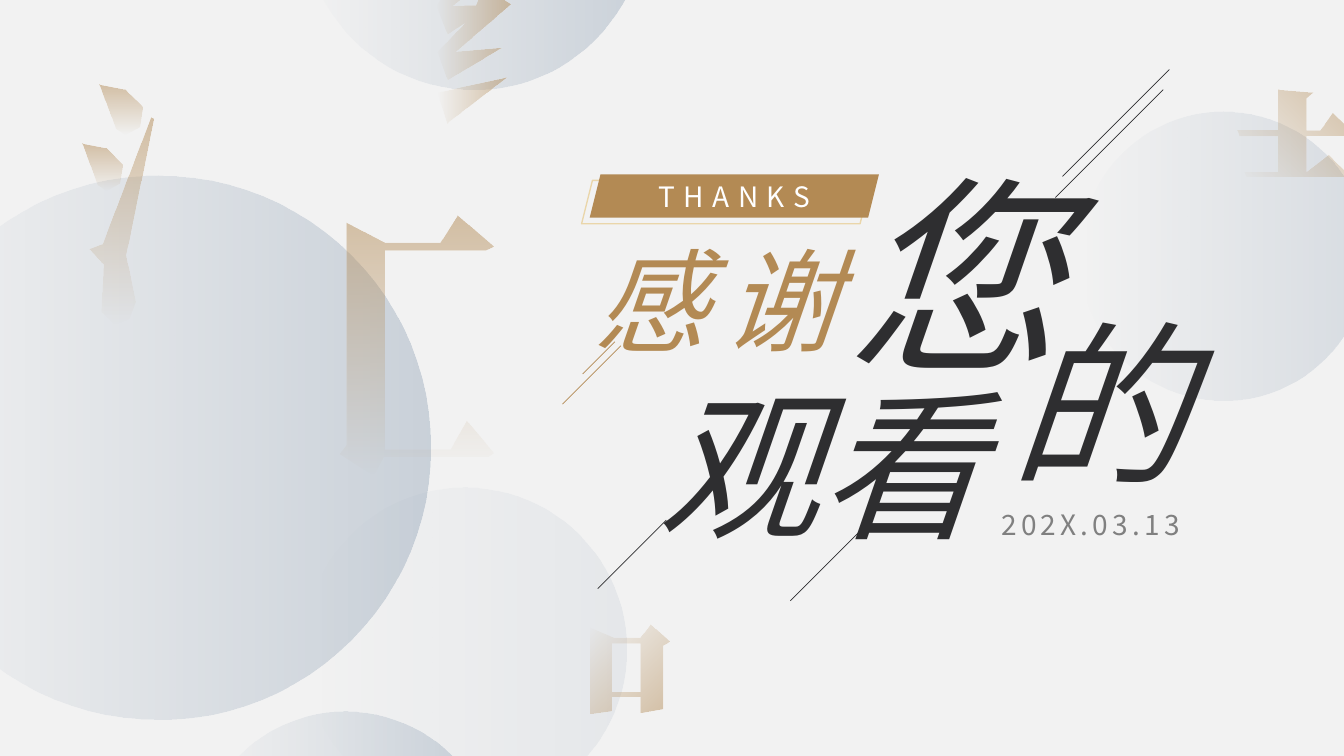
from lxml.etree import SubElement
from pptx import Presentation
from pptx.dml.color import RGBColor
from pptx.enum.shapes import MSO_CONNECTOR, MSO_SHAPE
from pptx.enum.text import MSO_ANCHOR, MSO_AUTO_SIZE, PP_ALIGN
from pptx.oxml.ns import qn
from pptx.util import Emu, Inches, Pt

CELL = Inches(0.1)
COLUMNS, ROWS = 133.33, 75
FONT = "Noto Sans CJK SC"
PAPER, INK, GOLD, PALE_GOLD = "F2F2F2", "2E2E30", "B38A54", "EAD6AA"
SLATE, GREY, WHITE = "6A839F", "808080", "FFFFFF"

CIRCLES = [
    (-11.3, 17.4, 54, 30),
    (30.1, 48.4, 32.1, 10),
    (19.4, 70.6, 29.8, 30),
    (107.1, 11.1, 28.6, 20),
    (30.1, -24.9, 33.8, 30),
]

DROP = [(0, 0), (2.5, 0.5), (4.2, 2.2), (3.9, 4.1), (2.5, 4.9), (1.6, 4.3)]
SWEEP = [(6, 0), (6.3, 0.1), (3.6, 13.6), (4.5, 18.2), (3.9, 19.9), (2.5, 20.5),
         (1.2, 19.2), (1.4, 14.5), (0, 13), (1.3, 12.5)]
FRAME = [(11.7, 0), (15.3, 3.1), (14.4, 3.5), (4.5, 3.5), (4.5, 23.1), (11, 23.1),
         (12.6, 20.3), (15.3, 23.5), (14.7, 23.9), (4.4, 23.9), (3.4, 25.8),
         (0, 23.6), (0.7, 22.7), (0.7, 0.7), (4.5, 2.7), (10, 2.7)]
EARTH = [(4, 0), (7.5, 0.3), (6.8, 0.9), (6.8, 4), (8.2, 4), (9.4, 2.3), (11.7, 4.6),
         (6.8, 4.6), (6.8, 8.1), (9, 6.4), (11.2, 8.6), (0.9, 8.6), (0.7, 8.1),
         (4, 8.1), (4, 4.6), (0.2, 4.6), (0, 4), (4, 4)]
MOUTH = [(5.9, 0), (7.8, 1.7), (7.1, 2.1), (7.1, 8.3), (4.9, 8.7), (4.9, 7.1),
         (2.1, 7.1), (2.1, 8.5), (0, 8.8), (0, 0.3), (2.3, 1.3), (4.9, 1.3)]
MOUTH_HOLE = [(2.1, 1.9), (2.1, 6.6), (4.9, 6.6), (4.9, 1.9)]
THREAD = [(3, 0), (5.9, 1.5), (1.6, 5.2), (3.9, 5.1), (4.6, 3.3), (7.3, 5),
          (1.9, 9.7), (6.4, 9.3), (1.1, 12.5), (0.1, 9.7), (2.9, 6.8),
          (1.1, 8), (0, 5.2)]
TICK = [(6.8, 0), (1.1, 4.4), (1, 4.6), (0, 1.5)]

BRUSH_STROKES = [
    (33.7, 21.4, 1, 90, [FRAME]),
    (9.9, 8.4, 1, 90, [DROP]),
    (8.9, 11.7, 1, 90, [SWEEP]),
    (8.2, 14.2, 0.95, 90, [DROP]),
    (122.8, 8.9, 1, 135, [EARTH]),
    (58.6, 62, 1, 225, [MOUTH, MOUTH_HOLE]),
    (43.3, -4.6, 1, 180, [THREAD]),
    (43.4, 7.7, 1, 180, [TICK]),
]

TITLE_WORDS = [
    ("观看", (59.3, 35.8, 43.8, 20.2), 115, INK, 0),
    ("感谢", (54.7, 22.5, 32.5, 14.3), 80, GOLD, 12),
    ("您", (81.8, 13.9, 25.3, 26), 150, INK, 12),
    ("的", (96.2, 28.8, 25.3, 22), 126, INK, 12),
]

DIAGONALS = [
    (85.2, 52.8, 6.8, INK),
    (61.6, 34.3, 5.8, GOLD),
    (66.1, 51.6, 6.8, INK),
    (115.4, 8.9, 10.7, INK),
    (116, 6.9, 10.6, INK),
    (61, 33.9, 3.2, GOLD),
]


def colour(value):
    return RGBColor.from_string(value)


def cells(*counts):
    return [Emu(round(count * CELL)) for count in counts]


def fade(shape, tint, opacity, direction):
    shape.shadow.inherit = False
    shape.line.fill.background()
    shape.fill.gradient()
    shape.fill.gradient_angle = 360 - direction
    for stop, position, share in zip(shape.fill.gradient_stops, (0, 1), (opacity, 0)):
        stop.position = position
        stop.color.rgb = colour(tint)
        rgb = shape._element.spPr.findall(".//" + qn("a:srgbClr"))[position]
        SubElement(rgb, qn("a:alpha"), val=str(share * 1000))


def add_circle(slide, left, top, size, opacity):
    circle = slide.shapes.add_shape(MSO_SHAPE.OVAL, *cells(left, top, size, size))
    fade(circle, SLATE, opacity, 180)


def add_brush_stroke(slide, left, top, scale, direction, outlines):
    outer, *holes = [[cells(left + x * scale, top + y * scale) for x, y in outline]
                     for outline in outlines]
    builder = slide.shapes.build_freeform(*outer[0])
    builder.add_line_segments(outer[1:], close=True)
    for hole in holes:
        builder.move_to(*hole[0])
        builder.add_line_segments(hole[1:], close=True)
    fade(builder.convert_to_shape(), GOLD, 50, direction)


def add_diagonal(slide, x, y, reach, tint):
    diagonal = slide.shapes.add_connector(
        MSO_CONNECTOR.STRAIGHT, *cells(x, y, x - reach, y + reach))
    diagonal.line.color.rgb = colour(tint)
    diagonal.line.width = Pt(0.5)
    SubElement(diagonal._element.spPr, qn("a:effectLst"))


def write(frame, words, size, tint, spacing, italic=False):
    paragraph = frame.paragraphs[0]
    paragraph.alignment = PP_ALIGN.CENTER
    run = paragraph.add_run()
    run.text = words
    run.font.size = Pt(size)
    run.font.italic = italic
    run.font.color.rgb = colour(tint)
    run.font.name = FONT
    properties = run._r.get_or_add_rPr()
    properties.set("spc", str(spacing * 100))
    SubElement(properties, qn("a:ea"), typeface=FONT)


def add_words(slide, words, area, size, tint, spacing, italic=True):
    frame = slide.shapes.add_textbox(*cells(*area)).text_frame
    frame.word_wrap = True
    frame.auto_size = MSO_AUTO_SIZE.SHAPE_TO_FIT_TEXT
    write(frame, words, size, tint, spacing, italic)


def add_ribbon(slide, left, top):
    ribbon = slide.shapes.add_shape(MSO_SHAPE.PARALLELOGRAM, *cells(left, top, 28.7, 4.3))
    ribbon.shadow.inherit = False
    return ribbon


def add_thanks(slide):
    border = add_ribbon(slide, 57.7, 17.9)
    border.fill.background()
    border.line.color.rgb = colour(PALE_GOLD)
    border.line.width = Pt(1)
    banner = add_ribbon(slide, 58.5, 17.3)
    banner.fill.solid()
    banner.fill.fore_color.rgb = colour(GOLD)
    banner.line.fill.background()
    frame = banner.text_frame
    frame.margin_left = frame.margin_right = Inches(0.04)
    frame.vertical_anchor = MSO_ANCHOR.MIDDLE
    write(frame, "THANKS", 20, WHITE, 6)


def main():
    deck = Presentation()
    deck.slide_width, deck.slide_height = cells(COLUMNS, ROWS)
    slide = deck.slides.add_slide(deck.slide_layouts[6])
    slide.background.fill.solid()
    slide.background.fill.fore_color.rgb = colour(PAPER)
    for circle in CIRCLES:
        add_circle(slide, *circle)
    for stroke in BRUSH_STROKES:
        add_brush_stroke(slide, *stroke)
    add_thanks(slide)
    for title_word in TITLE_WORDS:
        add_words(slide, *title_word)
    for diagonal in DIAGONALS:
        add_diagonal(slide, *diagonal)
    add_words(slide, "202X.03.13", (96.3, 49.9, 23.8, 4.3), 20, GREY, 3, italic=False)
    deck.save("out.pptx")


if __name__ == "__main__":
    main()
